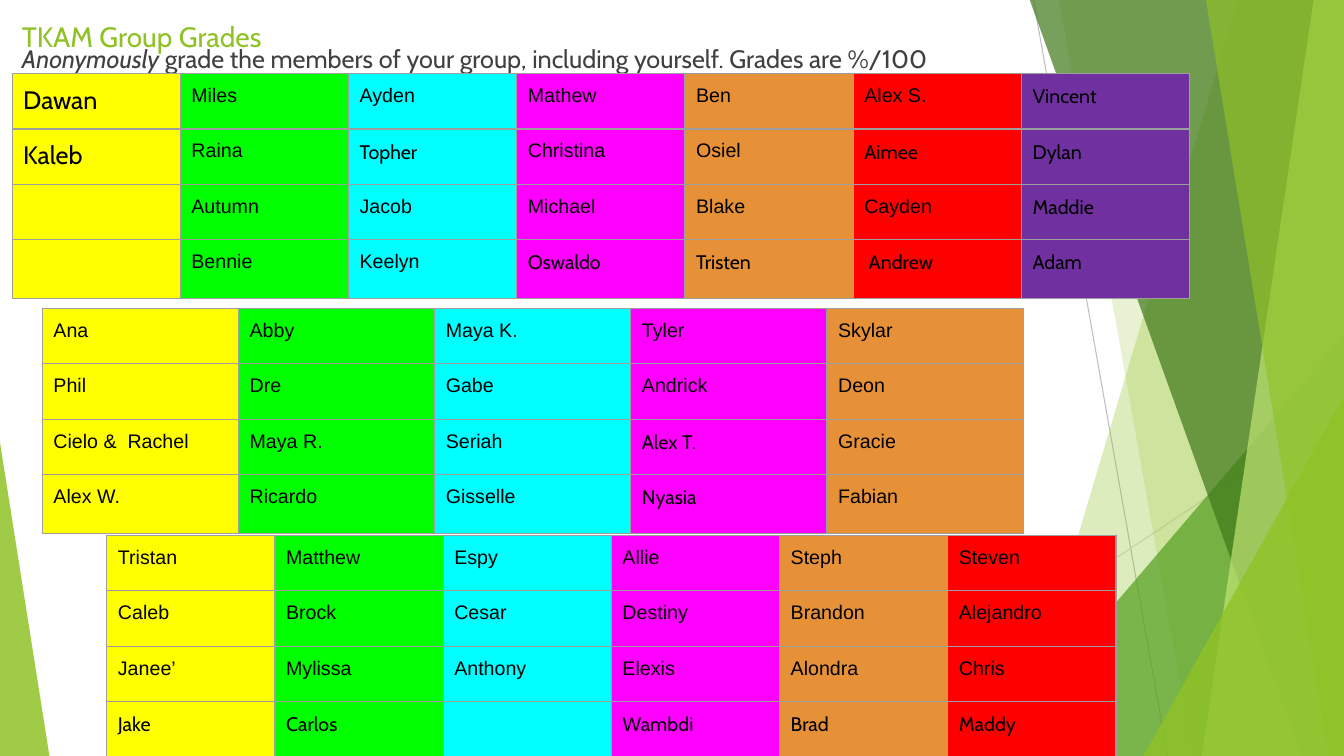
from dataclasses import dataclass

import pptx
import pptx.dml.color
import pptx.enum.shapes
import pptx.enum.text
import pptx.oxml
import pptx.oxml.ns
import pptx.util

SCALE = 9144  # EMU in one px, 100 px to the inch


@dataclass(frozen=True)
class Theme:
    leaf: str = "90C226"
    grass: str = "54A021"
    pine: str = "3F7819"
    lime: str = "C0E474"
    ink: str = "404040"
    black: str = "000000"
    edge: str = "9E9E9E"
    groups: tuple[str, ...] = ("FFFF00", "00FF00", "00FFFF", "FF00FF",
                               "E69138", "FF0000", "7030A0")
    head: int = 20
    large: int = 18
    small: int = 14
    main: str = "Cabin"
    plain: str = "Arial"


@dataclass(frozen=True)
class Ray:
    start: tuple[int, int]
    end: tuple[int, int]
    color: str


@dataclass(frozen=True)
class Panel:
    points: tuple[tuple[int, int], ...]
    color: str
    alpha: int


@dataclass(frozen=True)
class Wedge:
    box: tuple[int, int, int, int]
    apex: int
    color: str
    alpha: int


@dataclass(frozen=True)
class Run:
    text: str
    size: int
    color: str
    font: str = "Cabin"
    italic: bool = False


@dataclass(frozen=True)
class Label:
    box: tuple[int, int, int, int]
    runs: tuple[Run, ...]


@dataclass(frozen=True)
class Roster:
    left: int
    top: int
    width: int
    heights: tuple[int, ...]
    names: tuple[tuple[str, ...], ...]


THEME = Theme()

# Backdrop, from back to front
RAYS = (
    Ray((1025, 0), (1158, 750), "BFBFBF"),
    Ray((1333, 403), (812, 750), "D9D9D9"),
)
SHARDS = (
    Panel(((1228, -1), (1333, -1), (1333, 750), (1004, 750)), THEME.leaf, 30),
    Panel(((1050, -1), (1333, -1), (1333, 750), (1183, 750)), THEME.leaf, 20),
    Wedge((977, 333, 356, 417), 1, THEME.grass, 72),
    Panel(((1021, -1), (1333, -1), (1333, 750), (1291, 750)), THEME.pine, 70),
    Panel(((1303, -1), (1333, -1), (1333, 750), (1192, 750)), THEME.lime, 70),
    Panel(((1196, -1), (1333, -1), (1333, 750), (1318, 750)), THEME.leaf, 65),
    Wedge((1134, 393, 199, 357), 1, THEME.leaf, 80),
    Wedge((0, 439, 49, 311), 0, THEME.leaf, 85),
)

LABELS = (
    Label((12, 14, 940, 49), (Run("TKAM Group Grades", THEME.head, THEME.leaf),)),
    Label((12, 38, 1110, 424), (
        Run("Anonymously", THEME.large, THEME.ink, italic=True),
        Run(" grade the members of your group, including yourself. Grades are %/100",
            THEME.large, THEME.ink),
    )),
)

ROSTERS = (
    Roster(42, 306, 973, (55, 55, 55, 58), (
        ("Ana", "Abby", "Maya K.", "Tyler", "Skylar"),
        ("Phil", "Dre", "Gabe", "Andrick", "Deon"),
        ("Cielo &  Rachel", "Maya R.", "Seriah", "Alex T.", "Gracie"),
        ("Alex W.", "Ricardo", "Gisselle", "Nyasia", "Fabian"),
    )),
    Roster(106, 531, 1001, (55, 55, 55, 55), (
        ("Tristan", "Matthew", "Espy", "Allie", "Steph", "Steven"),
        ("Caleb", "Brock", "Cesar", "Destiny", "Brandon", "Alejandro"),
        ("Janee’", "Mylissa", "Anthony", "Elexis", "Alondra", "Chris"),
        ("Jake", "Carlos", "", "Wambdi", "Brad", "Maddy"),
    )),
    Roster(12, 73, 1168, (55, 55, 55, 58), (
        ("Dawan", "Miles", "Ayden", "Mathew", "Ben", "Alex S.", "Vincent"),
        ("Kaleb", "Raina", "Topher", "Christina", "Osiel", "Aimee", "Dylan"),
        ("", "Autumn", "Jacob", "Michael", "Blake", "Cayden", "Maddie"),
        ("", "Bennie", "Keelyn", "Oswaldo", "Tristen", " Andrew", "Adam"),
    )),
)
LARGE = {"Dawan", "Kaleb"}
CABIN = LARGE | {"Alex T.", "Nyasia", "Jake", "Carlos", "Wambdi", "Brad", "Maddy",
                 "Vincent", "Topher", "Aimee", "Dylan", "Maddie", "Oswaldo",
                 "Tristen", " Andrew", "Adam"}


def px(count: int) -> pptx.util.Emu:
    return pptx.util.Emu(count * SCALE)


def rgb(code: str) -> pptx.dml.color.RGBColor:
    return pptx.dml.color.RGBColor.from_string(code)


def add_run(para, run: Run) -> None:
    item = para.add_run()
    item.text = run.text
    font = item.font
    font.name, font.size = run.font, pptx.util.Pt(run.size)
    font.italic = run.italic
    font.color.rgb = rgb(run.color)


def draw_ray(slide, ray: Ray) -> None:
    line = slide.shapes.add_connector(
        pptx.enum.shapes.MSO_CONNECTOR.STRAIGHT, *map(px, ray.start + ray.end))
    line.line.color.rgb = rgb(ray.color)
    line.line.width = pptx.util.Pt(0.75)
    line._element.spPr.append(pptx.oxml.parse_xml(
        f'<a:effectLst {pptx.oxml.ns.nsdecls("a")}/>'))


def draw_shard(slide, shard: Panel | Wedge) -> None:
    if isinstance(shard, Panel):
        first, *rest = [(px(x), px(y)) for x, y in shard.points]
        build = slide.shapes.build_freeform(*first)
        build.add_line_segments(rest, close=True)
        shape = build.convert_to_shape()
    else:
        shape = slide.shapes.add_shape(
            pptx.enum.shapes.MSO_SHAPE.ISOSCELES_TRIANGLE, *map(px, shard.box))
        shape.adjustments[0] = shard.apex
    shape.shadow.inherit = False
    shape.line.fill.background()
    shape.fill.solid()
    shape.fill.fore_color.rgb = rgb(shard.color)
    tint = shape._element.spPr.find(".//" + pptx.oxml.ns.qn("a:srgbClr"))
    tint.append(pptx.oxml.parse_xml(
        f'<a:alpha {pptx.oxml.ns.nsdecls("a")} val="{shard.alpha * 1000}"/>'))


def draw_label(slide, label: Label) -> None:
    frame = slide.shapes.add_textbox(*map(px, label.box)).text_frame
    frame.word_wrap = True
    frame.vertical_anchor = pptx.enum.text.MSO_ANCHOR.TOP
    for run in label.runs:
        add_run(frame.paragraphs[0], run)


def style_cell(cell, name: str, color: str) -> None:
    props = cell._tc.get_or_add_tcPr()
    for side in "LRTB":
        props.append(pptx.oxml.parse_xml(
            f'<a:ln{side} {pptx.oxml.ns.nsdecls("a")} w="12700"><a:solidFill>'
            f'<a:srgbClr val="{THEME.edge}"/></a:solidFill></a:ln{side}>'))
    cell.fill.solid()
    cell.fill.fore_color.rgb = rgb(color)
    cell.margin_left = cell.margin_right = px(11)
    cell.margin_top = cell.margin_bottom = px(11)
    if name:
        size = THEME.large if name in LARGE else THEME.small
        font = THEME.main if name in CABIN else THEME.plain
        add_run(cell.text_frame.paragraphs[0], Run(name, size, THEME.black, font))


def draw_roster(slide, roster: Roster) -> None:
    rows, cols = len(roster.names), len(roster.names[0])
    table = slide.shapes.add_table(
        rows, cols, px(roster.left), px(roster.top),
        px(roster.width), px(sum(roster.heights))).table
    table.first_row = table.horz_banding = False
    for col in table.columns:
        col.width = pptx.util.Emu(px(roster.width) // cols)
    for r, names in enumerate(roster.names):
        table.rows[r].height = px(roster.heights[r])
        for c, name in enumerate(names):
            style_cell(table.cell(r, c), name, THEME.groups[c])


def main() -> None:
    deck = pptx.Presentation()
    deck.slide_width, deck.slide_height = px(1333), px(750)
    slide = deck.slides.add_slide(deck.slide_layouts[6])
    for ray in RAYS:
        draw_ray(slide, ray)
    for shard in SHARDS:
        draw_shard(slide, shard)
    for label in LABELS:
        draw_label(slide, label)
    for roster in ROSTERS:
        draw_roster(slide, roster)
    deck.save("out.pptx")


if __name__ == "__main__":
    main()
